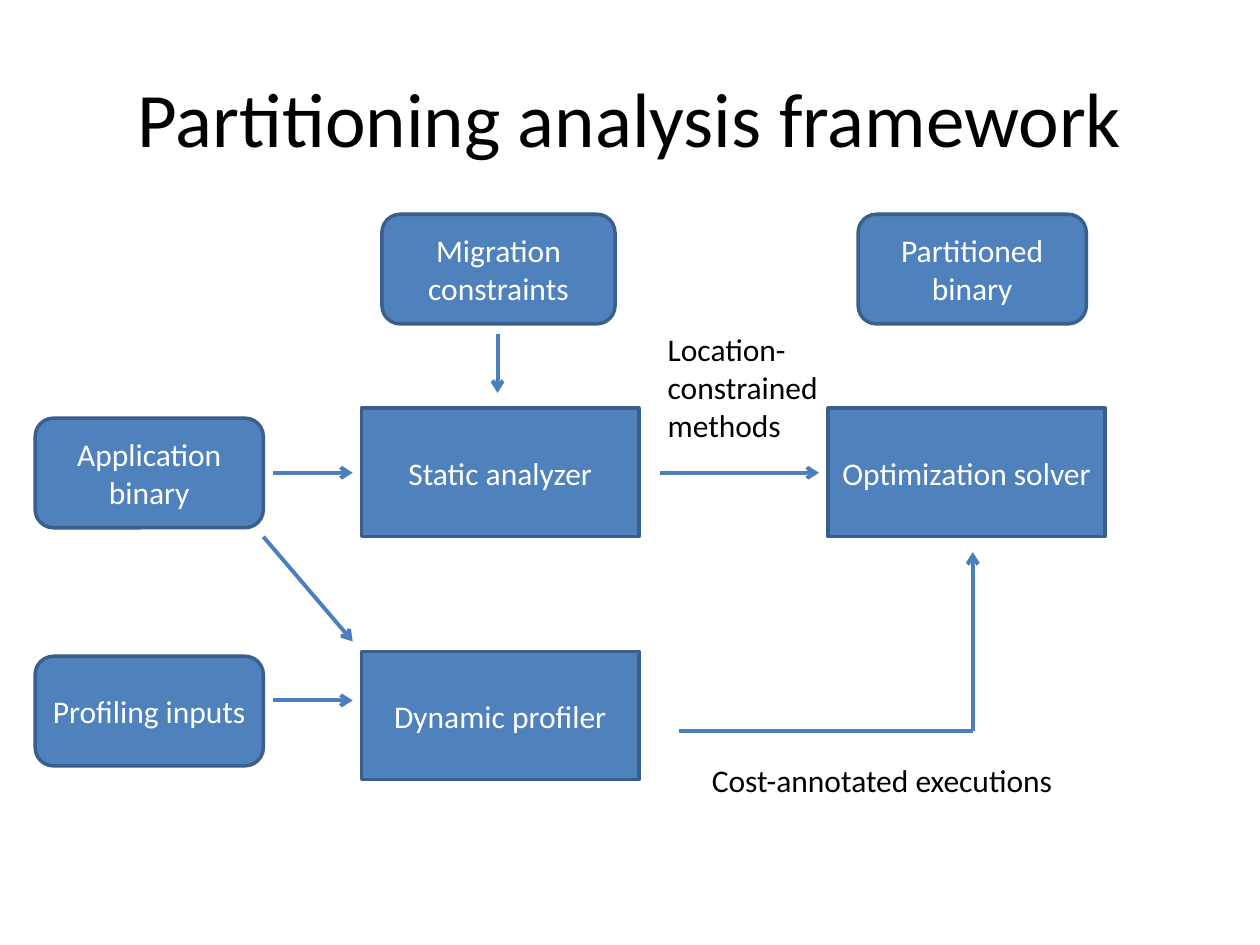
from collections import namedtuple
from lxml import etree
from pptx import Presentation
from pptx.dml.color import RGBColor
from pptx.enum import shapes, text
from pptx.oxml.ns import qn
from pptx.util import Cm, Pt

Box = namedtuple("Box", "left top width height")

SLIDE = Box(0, 0, 25.4, 19.05)
TITLE = Box(1.27, 0.76, 22.86, 3.18)
DIAGRAM = Box(0.71, 4.32, 21.57, 11.91)

FILL, BORDER, ARROW = "4F81BD", "3A5F8C", "4B7EBC"
WHITE, BLACK = "FFFFFF", "000000"

PROCESS = (shapes.MSO_SHAPE.RECTANGLE, 2.59)
DATA = (shapes.MSO_SHAPE.ROUNDED_RECTANGLE, 2.21)
NODES = [
    ("Static analyzer", PROCESS, 6.58, 3.91, 5.59),
    ("Dynamic profiler", PROCESS, 6.58, 8.81, 5.59),
    ("Optimization solver", PROCESS, 15.98, 3.91, 5.59),
    ("Migration constraints", DATA, 6.99, 0, 4.7),
    ("Application binary", DATA, 0, 4.11, 4.6),
    ("Profiling inputs", DATA, 0, 8.91, 4.6),
    ("Partitioned binary", DATA, 16.59, 0, 4.6),
]
FLOWS = [
    [(9.32, 2.41), (9.32, 3.6)],
    [(4.8, 5.21), (6.4, 5.21)],
    [(4.8, 9.8), (6.4, 9.8)],
    [(4.6, 6.5), (6.4, 8.61)],
    [(12.6, 5.21), (15.8, 5.21)],
    [(12.98, 10.41), (18.9, 10.41), (18.9, 6.81)],
]
LABELS = [
    ("Location-constrained methods", Box(12.5, 2.21, 4.5, 2.57)),
    ("Cost-annotated executions", Box(13.39, 10.89, 7.8, 1.02)),
]


def color(value):
    return RGBColor.from_string(value)


def apply(target, values):
    for name, value in values.items():
        setattr(target, name, value)


def lengths(box, origin=SLIDE):
    return (Cm(origin.left + box.left), Cm(origin.top + box.top),
            Cm(box.width), Cm(box.height))


def write(frame, words, size, ink, align, anchor):
    apply(frame, {"word_wrap": True, "vertical_anchor": anchor})
    para = frame.paragraphs[0]
    para.alignment = align
    span = para.add_run()
    span.text = words
    apply(span.font, {"name": "Calibri", "size": Pt(size)})
    span.font.color.rgb = color(ink)


def place_title(page, box):
    title = page.shapes.title
    apply(title, dict(zip(("left", "top", "width", "height"), lengths(box))))
    write(title.text_frame, "Partitioning analysis framework", 44, BLACK,
          text.PP_ALIGN.CENTER, text.MSO_ANCHOR.MIDDLE)


def place_nodes(page, area):
    for words, (outline, height), left, top, width in NODES:
        box = Box(left, top, width, height)
        node = page.shapes.add_shape(outline, *lengths(box, area))
        node.shadow.inherit = False
        node.fill.solid()
        node.fill.fore_color.rgb = color(FILL)
        node.line.color.rgb = color(BORDER)
        node.line.width = Pt(2)
        write(node.text_frame, words, 18, WHITE,
              text.PP_ALIGN.CENTER, text.MSO_ANCHOR.MIDDLE)


def place_flows(page, area):
    for points in FLOWS:
        corners = [(Cm(area.left + x), Cm(area.top + y)) for x, y in points]
        for start, end in zip(corners, corners[1:]):
            line = page.shapes.add_connector(
                shapes.MSO_CONNECTOR.STRAIGHT, *start, *end)
            line.line.color.rgb = color(ARROW)
            line.line.width = Pt(2.25)
            if end == corners[-1]:
                etree.SubElement(line.line._get_or_add_ln(),
                                 qn("a:tailEnd"), type="arrow")
            etree.SubElement(line._element.spPr, qn("a:effectLst"))


def place_labels(page, area):
    for words, box in LABELS:
        label = page.shapes.add_textbox(*lengths(box, area))
        write(label.text_frame, words, 18, BLACK,
              text.PP_ALIGN.LEFT, text.MSO_ANCHOR.TOP)
        label.text_frame.auto_size = text.MSO_AUTO_SIZE.SHAPE_TO_FIT_TEXT


def main():
    deck = Presentation()
    apply(deck, {"slide_width": Cm(SLIDE.width),
                 "slide_height": Cm(SLIDE.height)})
    page = deck.slides.add_slide(deck.slide_layouts[5])
    place_title(page, TITLE)
    for place in (place_nodes, place_flows, place_labels):
        place(page, DIAGRAM)
    deck.save("out.pptx")


if __name__ == "__main__":
    main()
